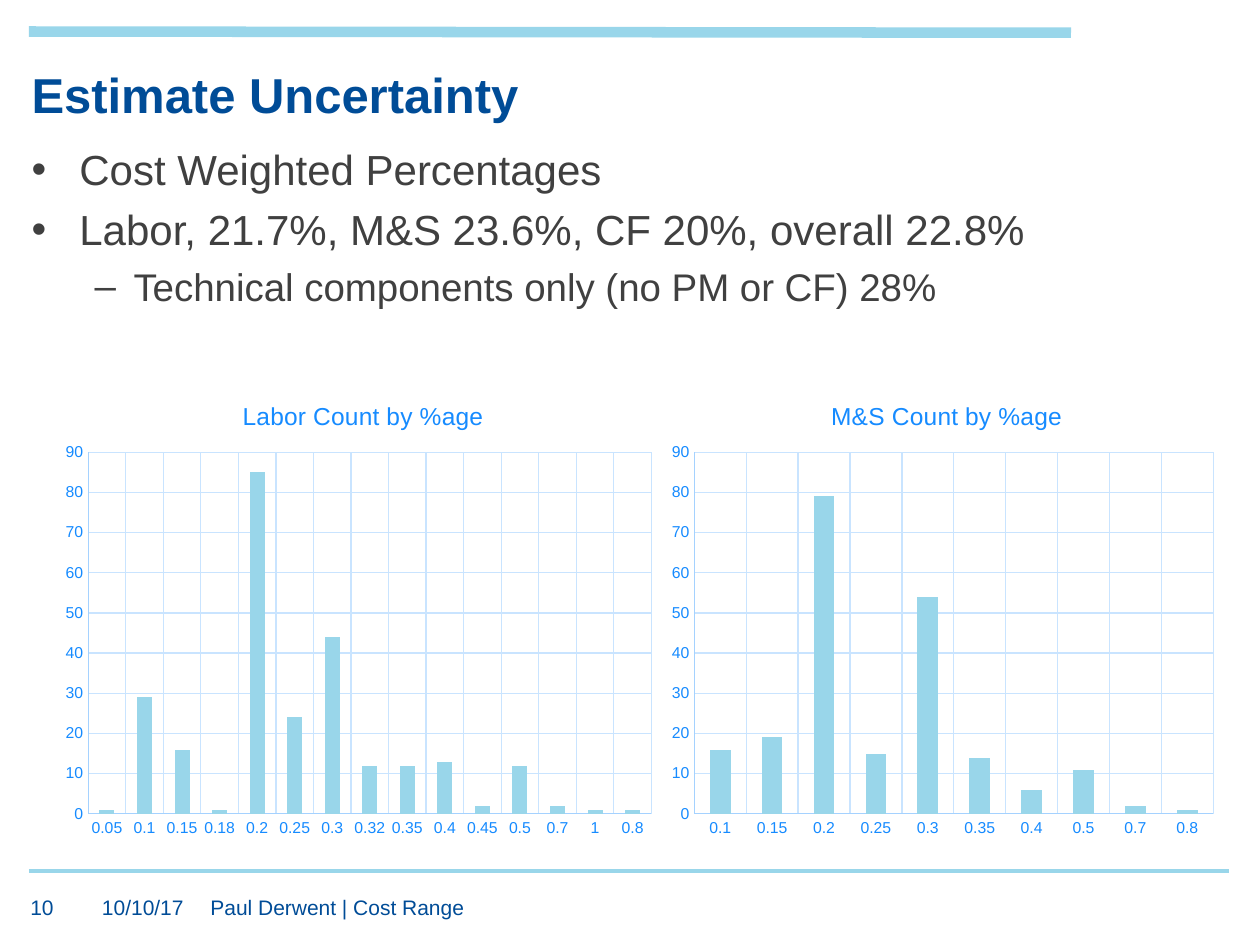
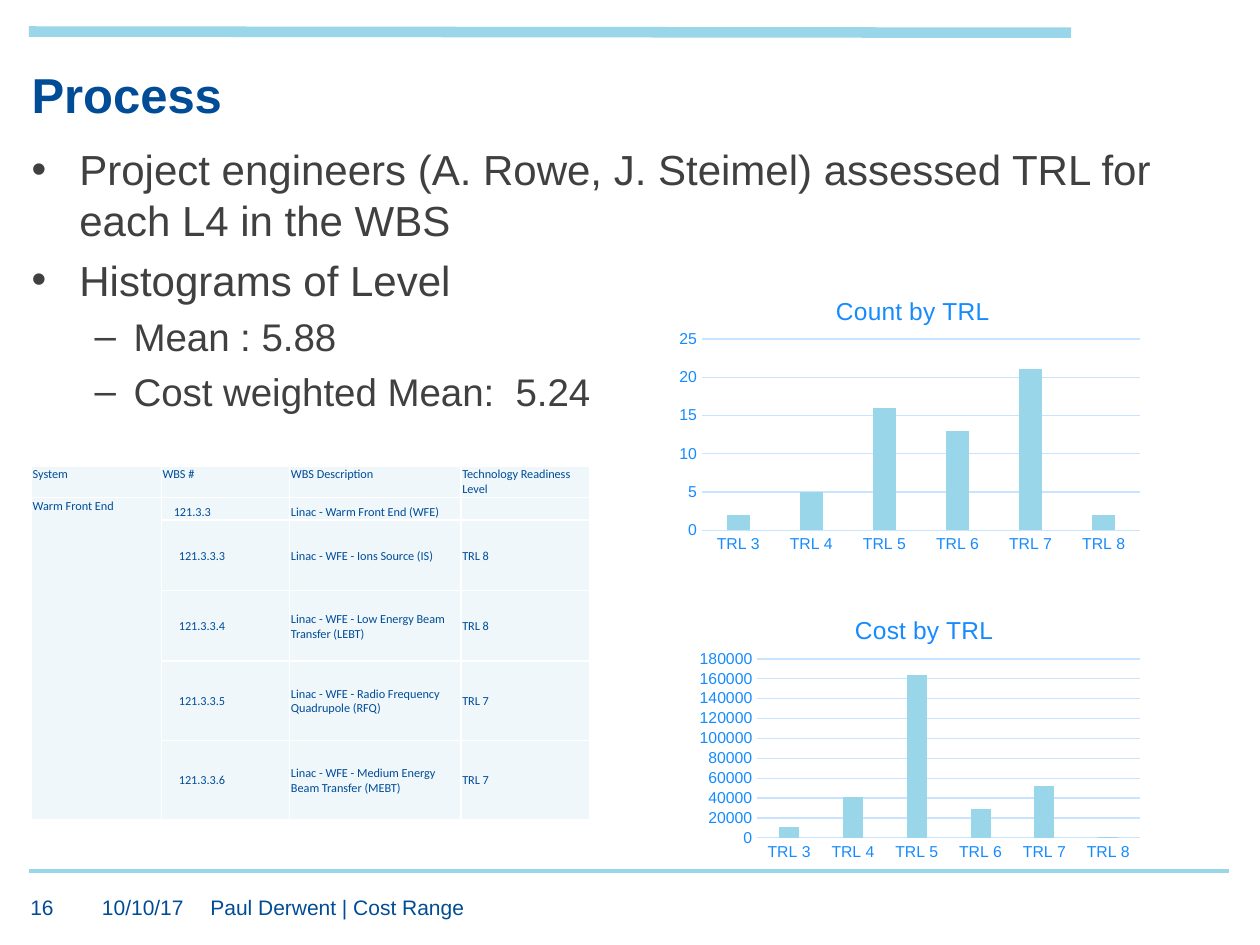
from lxml.etree import SubElement
from pptx import Presentation
from pptx.chart.data import CategoryChartData
from pptx.dml.color import RGBColor
from pptx.enum.chart import XL_CHART_TYPE, XL_TICK_MARK
from pptx.enum.shapes import MSO_CONNECTOR
from pptx.enum.text import MSO_ANCHOR, MSO_AUTO_SIZE, PP_ALIGN
from pptx.oxml import parse_xml
from pptx.oxml.ns import nsdecls, qn
from pptx.util import Inches, Pt

COLORS = {
    "navy": "004C97",
    "sky": "99D6EA",
    "body": "404040",
    "axis_text": "168BFF",
    "axis_line": "A5D2FF",
    "grid": "C9E4FF",
    "cell": "EFF7FB",
    "white": "FFFFFF",
}
SLIDE_WIDTH, SLIDE_HEIGHT = Inches(10), Inches(7.5)
COLUMN, ROW = SLIDE_WIDTH // 100, SLIDE_HEIGHT // 75
FONT = "Arial"
BULLETS = [
    {"mark": "•", "size": 24, "left": 0.38, "hang": 0.38},
    {"mark": "–", "size": 22, "left": 0.81, "hang": 0.31},
]
READINESS_LEVELS = [f"TRL {level}" for level in range(3, 9)]


def color(name):
    return RGBColor.from_string(COLORS[name])


def grid_box(left, top, width, height):
    return [int(left * COLUMN), int(top * ROW), int(width * COLUMN), int(height * ROW)]


def format_font(font, size, color_name, name=FONT, bold=False):
    font.size = Pt(size)
    font.name = name
    font.bold = bold
    font.color.rgb = color(color_name)


def write(paragraph, text, size=12, color_name="navy", name=FONT, bold=False):
    run = paragraph.add_run()
    run.text = text
    format_font(run.font, size, color_name, name, bold)


def clear_margins(text_frame):
    text_frame.margin_left = text_frame.margin_right = 0
    text_frame.margin_top = text_frame.margin_bottom = 0
    text_frame.word_wrap = True
    text_frame.auto_size = MSO_AUTO_SIZE.NONE


def add_text_frame(slide, box):
    text_frame = slide.shapes.add_textbox(*grid_box(*box)).text_frame
    clear_margins(text_frame)
    return text_frame


def add_rule(slide, start, end, width):
    ends = [int(start[0] * COLUMN), int(start[1] * ROW), int(end[0] * COLUMN), int(end[1] * ROW)]
    connector = slide.shapes.add_connector(MSO_CONNECTOR.STRAIGHT, *ends)
    connector.line.color.rgb = color("sky")
    connector.line.width = Pt(width)
    SubElement(connector._element.spPr, qn("a:effectLst"))


def add_title(slide, text):
    title = slide.shapes.title
    title.left, title.top, title.width, title.height = grid_box(2.5, 5.1, 95, 4.7)
    clear_margins(title.text_frame)
    title.text_frame.vertical_anchor = MSO_ANCHOR.BOTTOM
    paragraph = title.text_frame.paragraphs[0]
    paragraph.alignment = PP_ALIGN.LEFT
    write(paragraph, text, size=28, bold=True)


def add_framed_slide(presentation, title, number):
    slide = presentation.slides.add_slide(presentation.slide_layouts[5])
    add_rule(slide, (2.3, 2.5), (85, 2.6), 6)
    add_rule(slide, (2.3, 69.1), (97.5, 69.1), 2.25)
    add_title(slide, title)
    footers = [("10/10/17", 8.1, 7.4), ("Paul Derwent | Cost Range", 16.7, 60.6), (number, 2.4, 4.5)]
    for text, left, width in footers:
        text_frame = add_text_frame(slide, (left, 71, width, 2.6))
        write(text_frame.paragraphs[0], text)
    return slide


def add_bullets(slide, items):
    text_frame = add_text_frame(slide, (2.5, 11.4, 94.8, 54.5))
    for index, (level, text) in enumerate(items):
        bullet = BULLETS[level]
        paragraph = text_frame.add_paragraph() if index else text_frame.paragraphs[0]
        paragraph.level = level
        properties = paragraph._p.get_or_add_pPr()
        properties.set("marL", str(Inches(bullet["left"])))
        properties.set("indent", str(-Inches(bullet["hang"])))
        SubElement(properties, qn("a:buFont")).set("typeface", FONT)
        SubElement(properties, qn("a:buChar")).set("char", bullet["mark"])
        if index:
            paragraph.space_before = Pt(0.23 * bullet["size"])
        write(paragraph, text, size=bullet["size"], color_name="body")


def set_layout(parent, position, values, inner=False):
    old_layout = parent.find(qn("c:layout"))
    if old_layout is not None:
        parent.remove(old_layout)
    target = '<c:layoutTarget val="inner"/>' if inner else ""
    modes = '<c:xMode val="edge"/><c:yMode val="edge"/>'
    lengths = "".join(f'<c:{key} val="{value:.4f}"/>' for key, value in zip("xywh", values))
    parent.insert(position, parse_xml(
        f'<c:layout {nsdecls("c")}><c:manualLayout>{target}{modes}{lengths}</c:manualLayout></c:layout>'))


def format_line(line, color_name):
    line.color.rgb = color(color_name)
    line.width = Pt(0.75)


def format_axis(axis, line_color, gridlines):
    axis.major_tick_mark = axis.minor_tick_mark = XL_TICK_MARK.NONE
    format_font(axis.tick_labels.font, 9, "axis_text")
    axis.has_major_gridlines = gridlines
    if gridlines:
        format_line(axis.major_gridlines.format.line, "grid")
    if line_color:
        format_line(axis.format.line, line_color)
    else:
        axis.format.line.fill.background()


def add_column_chart(slide, title, box, plot_box, title_left, categories, values,
                     maximum, step, boxed=False):
    data = CategoryChartData()
    data.categories = categories
    data.add_series("Series 1", values)
    chart = slide.shapes.add_chart(XL_CHART_TYPE.COLUMN_CLUSTERED, *grid_box(*box), data).chart
    chart.has_legend = False
    format_font(chart.font, 10, "navy")

    chart.has_title = True
    write(chart.chart_title.text_frame.paragraphs[0], title, size=14, color_name="axis_text")
    left, top, width, height = box
    set_layout(chart.chart_title._element, 1, [(title_left - left) / width, 1.5 / height])
    plot_left, plot_top, plot_width, plot_height = plot_box
    shares = [(plot_left - left) / width, (plot_top - top) / height,
              plot_width / width, plot_height / height]
    set_layout(chart._chartSpace.chart.plotArea, 0, shares, inner=True)

    format_axis(chart.category_axis, "axis_line" if boxed else "grid", boxed)
    format_axis(chart.value_axis, "axis_line" if boxed else None, True)
    chart.value_axis.minimum_scale = 0
    chart.value_axis.maximum_scale = maximum
    chart.value_axis.major_unit = step
    plot = chart.plots[0]
    plot.vary_by_categories = False
    plot.gap_width = 150 if boxed else 219
    plot.overlap = 0 if boxed else -27
    fill = plot.series[0].format.fill
    fill.solid()
    fill.fore_color.rgb = color("sky")


def format_cell(cell, text, anchor, indent):
    cell.margin_left = Inches(0.01 + indent)
    cell.margin_right = cell.margin_top = Inches(0.01)
    cell.margin_bottom = 0
    cell.vertical_anchor = anchor
    properties = cell._tc.get_or_add_tcPr()
    for side in ("lnL", "lnR", "lnT", "lnB"):
        border = SubElement(properties, qn(f"a:{side}"), w=str(Pt(1)))
        border_fill = SubElement(border, qn("a:solidFill"))
        SubElement(border_fill, qn("a:srgbClr"), val=COLORS["white"])
    cell.fill.solid()
    cell.fill.fore_color.rgb = color("cell")
    paragraph = cell.text_frame.paragraphs[0]
    if text:
        write(paragraph, text, size=7, name="Calibri")
    else:
        SubElement(paragraph._p, qn("a:endParaRPr"), sz="700")


def add_readiness_table(slide, rows):
    column_widths = [10.3, 10.2, 13.6, 10.2]
    row_heights = [1.8, 1.8, 5.6, 5.6, 6.3, 6.3]
    box = grid_box(2.5, 37, sum(column_widths), sum(row_heights))
    table = slide.shapes.add_table(len(rows), len(column_widths), *box).table
    table.first_row = table.horz_banding = False
    for column, width in zip(table.columns, column_widths):
        column.width = int(width * COLUMN)
    for row, height in zip(table.rows, row_heights):
        row.height = int(height * ROW)
    table.cell(1, 0).merge(table.cell(len(rows) - 1, 0))
    row_anchors = [MSO_ANCHOR.TOP, MSO_ANCHOR.BOTTOM] + [MSO_ANCHOR.MIDDLE] * 4
    number_indents = [0, 0.09] + [0.13] * 4
    for row_index, texts in enumerate(rows):
        for column_index, text in enumerate(texts):
            anchor = row_anchors[row_index] if column_index else MSO_ANCHOR.TOP
            indent = number_indents[row_index] if column_index == 1 else 0
            format_cell(table.cell(row_index, column_index), text, anchor, indent)


def build_uncertainty_slide(presentation):
    slide = add_framed_slide(presentation, "Estimate Uncertainty", "10")
    add_bullets(slide, [
        (0, "Cost Weighted Percentages"),
        (0, "Labor, 21.7%, M&S 23.6%, CF 20%, overall 22.8%"),
        (1, "Technical components only (no PM or CF) 28%"),
    ])
    add_column_chart(
        slide, "Labor Count by %age", (4.3, 29.9, 48.4, 37.3), (7, 35.9, 44.7, 28.7), 18.9,
        "0.05 0.1 0.15 0.18 0.2 0.25 0.3 0.32 0.35 0.4 0.45 0.5 0.7 1 0.8".split(),
        [1, 29, 16, 1, 85, 24, 44, 12, 12, 13, 2, 12, 2, 1, 1], 90, 10, boxed=True)
    add_column_chart(
        slide, "M&S Count by %age", (52.4, 29.9, 44.8, 37.3), (55.1, 35.9, 41.2, 28.7), 65.6,
        "0.1 0.15 0.2 0.25 0.3 0.35 0.4 0.5 0.7 0.8".split(),
        [16, 19, 79, 15, 54, 14, 6, 11, 2, 1], 90, 10, boxed=True)


def build_process_slide(presentation):
    slide = add_framed_slide(presentation, "Process", "16")
    add_bullets(slide, [
        (0, "Project engineers (A. Rowe, J. Steimel) assessed TRL for each L4 in the WBS"),
        (0, "Histograms of Level"),
        (1, "Mean : 5.88"),
        (1, "Cost weighted Mean:  5.24"),
    ])
    add_readiness_table(slide, [
        ("System", "WBS #", "WBS Description", "Technology Readiness Level"),
        ("Warm Front End", "121.3.3", "Linac - Warm Front End (WFE)", ""),
        ("", "121.3.3.3", "Linac - WFE - Ions Source (IS)", "TRL 8"),
        ("", "121.3.3.4", "Linac - WFE - Low Energy Beam Transfer (LEBT)", "TRL 8"),
        ("", "121.3.3.5", "Linac - WFE - Radio Frequency Quadrupole (RFQ)", "TRL 7"),
        ("", "121.3.3.6", "Linac - WFE - Medium Energy Beam Transfer (MEBT)", "TRL 7"),
    ])
    add_column_chart(
        slide, "Count by TRL", (53.1, 21.6, 38.1, 22.9), (55.7, 26.9, 34.8, 15.2), 66,
        READINESS_LEVELS, [2, 5, 16, 13, 21, 2], 25, 5)
    add_column_chart(
        slide, "Cost by TRL", (54.8, 46.9, 36.4, 21.9), (60.1, 52.3, 30.4, 14.2), 67.5,
        READINESS_LEVELS, [11000, 41000, 164000, 29000, 52000, 1000], 180000, 20000)


def main():
    presentation = Presentation()
    presentation.slide_width = SLIDE_WIDTH
    presentation.slide_height = SLIDE_HEIGHT
    build_uncertainty_slide(presentation)
    build_process_slide(presentation)
    presentation.save("out.pptx")


if __name__ == "__main__":
    main()
